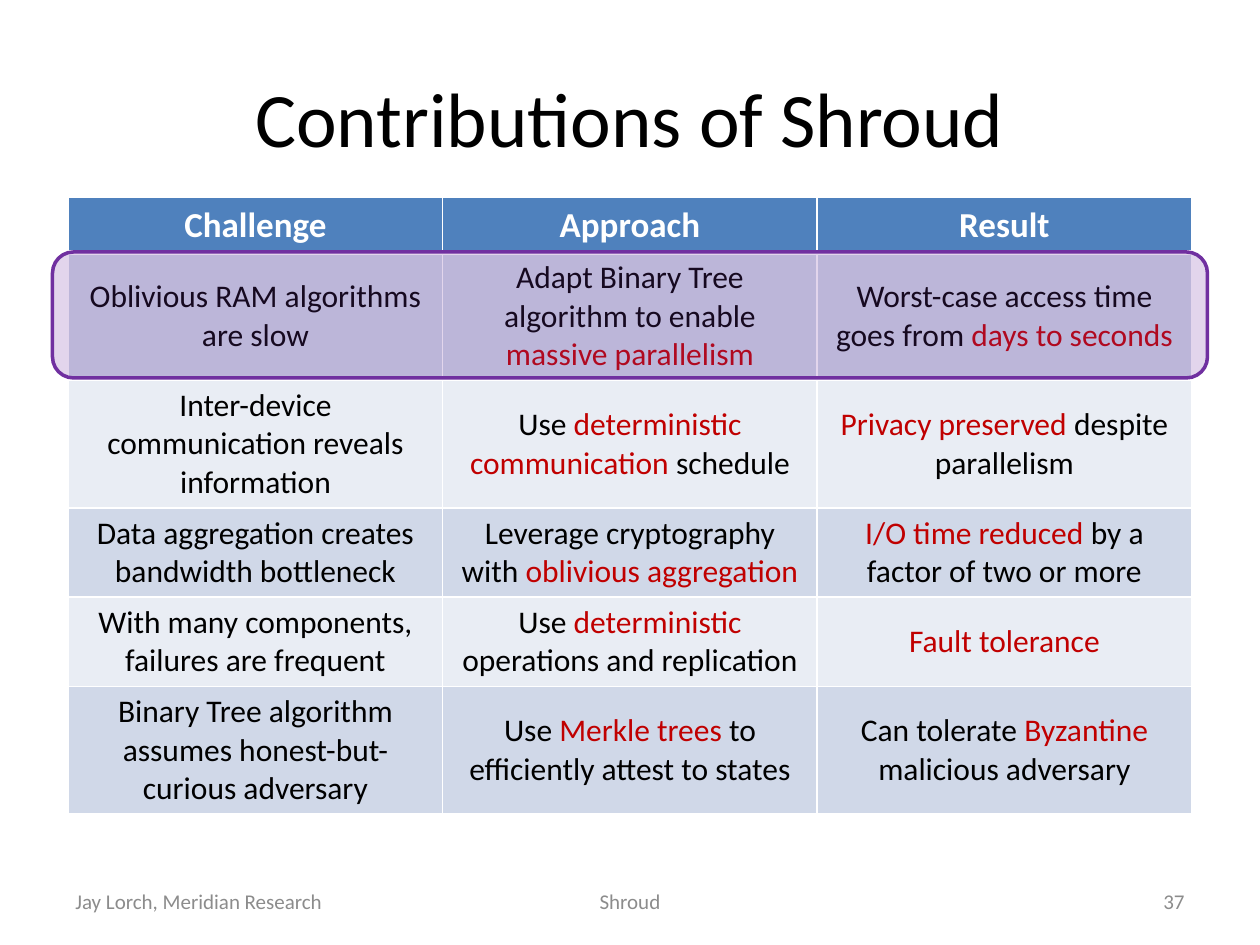
from typing import NamedTuple

from lxml import etree
from pptx import Presentation
from pptx.dml.color import RGBColor
from pptx.enum.shapes import MSO_SHAPE
from pptx.enum.text import MSO_ANCHOR, PP_ALIGN
from pptx.oxml.ns import qn
from pptx.util import Pt

LEFT, CENTER, RIGHT = PP_ALIGN.LEFT, PP_ALIGN.CENTER, PP_ALIGN.RIGHT
MIDDLE = MSO_ANCHOR.MIDDLE
ROUNDED = MSO_SHAPE.ROUNDED_RECTANGLE

FONT = "Calibri"
COLORS = {
    "text": "000000",
    "emphasis": "C00000",
    "footer": "8C8C8C",
    "header": "4F81BD",
    "odd_row": "D0D8E8",
    "even_row": "E9EDF4",
    "white": "FFFFFF",
    "highlight": "7030A0",
}


class Label(NamedTuple):
    text: str
    left: float
    top: float
    width: float
    height: float
    size: float
    color: str
    align: PP_ALIGN


class Contribution(NamedTuple):
    height: float
    challenge: str
    approach: str
    result: str


LABELS = [
    Label("Contributions of Shroud", 36, 21.6, 648, 90, 44, "text", CENTER),
    Label("Shroud", 246, 500.4, 228, 28.8, 12, "footer", CENTER),
    Label("Jay Lorch, Meridian Research", 36, 500.4, 168, 28.8, 12, "footer", LEFT),
    Label("37", 516, 500.4, 168, 28.8, 12, "footer", RIGHT),
]

# Words between asterisks are emphasised
HEADINGS = Contribution(31, "Challenge", "Approach", "Result")
CONTRIBUTIONS = [
    Contribution(73, "Oblivious RAM algorithms are slow",
                 "Adapt Binary Tree algorithm to enable *massive parallelism*",
                 "Worst-case access time goes from *days to seconds*"),
    Contribution(73, "Inter-device communication reveals information",
                 "Use *deterministic communication* schedule",
                 "*Privacy preserved* despite parallelism"),
    Contribution(51, "Data aggregation creates bandwidth bottleneck",
                 "Leverage cryptography with *oblivious aggregation*",
                 "*I/O time reduced* by a factor of two or more"),
    Contribution(51, "With many components, failures are frequent",
                 "Use *deterministic* operations and replication",
                 "*Fault tolerance*"),
    Contribution(73, "Binary Tree algorithm assumes honest-but-curious adversary",
                 "Use *Merkle trees* to efficiently attest to states",
                 "Can tolerate *Byzantine* malicious adversary"),
]
TABLE_LEFT, TABLE_TOP, COLUMN_WIDTH = 39, 113, 214


def rgb(name: str) -> RGBColor:
    return RGBColor.from_string(COLORS[name])


def write(frame, text: str, *, size: float, color: str = "text",
          bold: bool = False, align: PP_ALIGN = CENTER) -> None:
    paragraph = frame.paragraphs[0]
    paragraph.alignment = align
    for index, part in enumerate(text.split("*")):
        if part:
            run = paragraph.add_run()
            run.text = part
            run.font.name = FONT
            run.font.size = Pt(size)
            run.font.bold = bold
            run.font.color.rgb = rgb("emphasis" if index % 2 else color)


def add_label(slide, label: Label) -> None:
    box = slide.shapes.add_textbox(Pt(label.left), Pt(label.top),
                                   Pt(label.width), Pt(label.height))
    box.text_frame.word_wrap = True
    box.text_frame.vertical_anchor = MIDDLE
    write(box.text_frame, label.text, size=label.size, color=label.color,
          align=label.align)


def set_borders(cell, bottom: float = 1) -> None:
    properties = cell._tc.get_or_add_tcPr()
    for side, width in {"L": 1, "R": 1, "T": 1, "B": bottom}.items():
        border = etree.SubElement(properties, qn(f"a:ln{side}"), w=str(Pt(width)))
        fill = etree.SubElement(border, qn("a:solidFill"))
        etree.SubElement(fill, qn("a:srgbClr"), val=COLORS["white"])


def add_contributions(slide) -> None:
    rows = [HEADINGS, *CONTRIBUTIONS]
    columns = len(HEADINGS) - 1
    table = slide.shapes.add_table(
        len(rows), columns, Pt(TABLE_LEFT), Pt(TABLE_TOP),
        Pt(COLUMN_WIDTH * columns), Pt(sum(row.height for row in rows))).table
    for column in table.columns:
        column.width = Pt(COLUMN_WIDTH)
    for row_index, (height, *texts) in enumerate(rows):
        table.rows[row_index].height = Pt(height)
        is_header = row_index == 0
        band = "odd_row" if row_index % 2 else "even_row"
        for column_index, text in enumerate(texts):
            cell = table.cell(row_index, column_index)
            set_borders(cell, bottom=3 if is_header else 1)
            cell.fill.solid()
            cell.fill.fore_color.rgb = rgb("header" if is_header else band)
            cell.vertical_anchor = MIDDLE
            write(cell.text_frame, text, size=20 if is_header else 18,
                  color="white" if is_header else "text", bold=is_header)


def add_highlight(slide, left: float, top: float, width: float,
                  height: float) -> None:
    frame = slide.shapes.add_shape(ROUNDED, Pt(left), Pt(top), Pt(width), Pt(height))
    frame.shadow.inherit = False
    frame.fill.solid()
    frame.fill.fore_color.rgb = rgb("highlight")
    tint = frame.fill._xPr.find(f"{qn('a:solidFill')}/{qn('a:srgbClr')}")
    etree.SubElement(tint, qn("a:alpha"), val="20000")
    frame.line.color.rgb = rgb("highlight")
    frame.line.width = Pt(2)


def main() -> None:
    deck = Presentation()
    deck.slide_width, deck.slide_height = Pt(720), Pt(540)
    slide = deck.slides.add_slide(deck.slide_layouts[6])

    # Title and footer
    for label in LABELS:
        add_label(slide, label)

    # Table with the first contribution highlighted
    add_contributions(slide)
    add_highlight(slide, 30, 144, 660, 72)

    deck.save("out.pptx")


if __name__ == "__main__":
    main()
